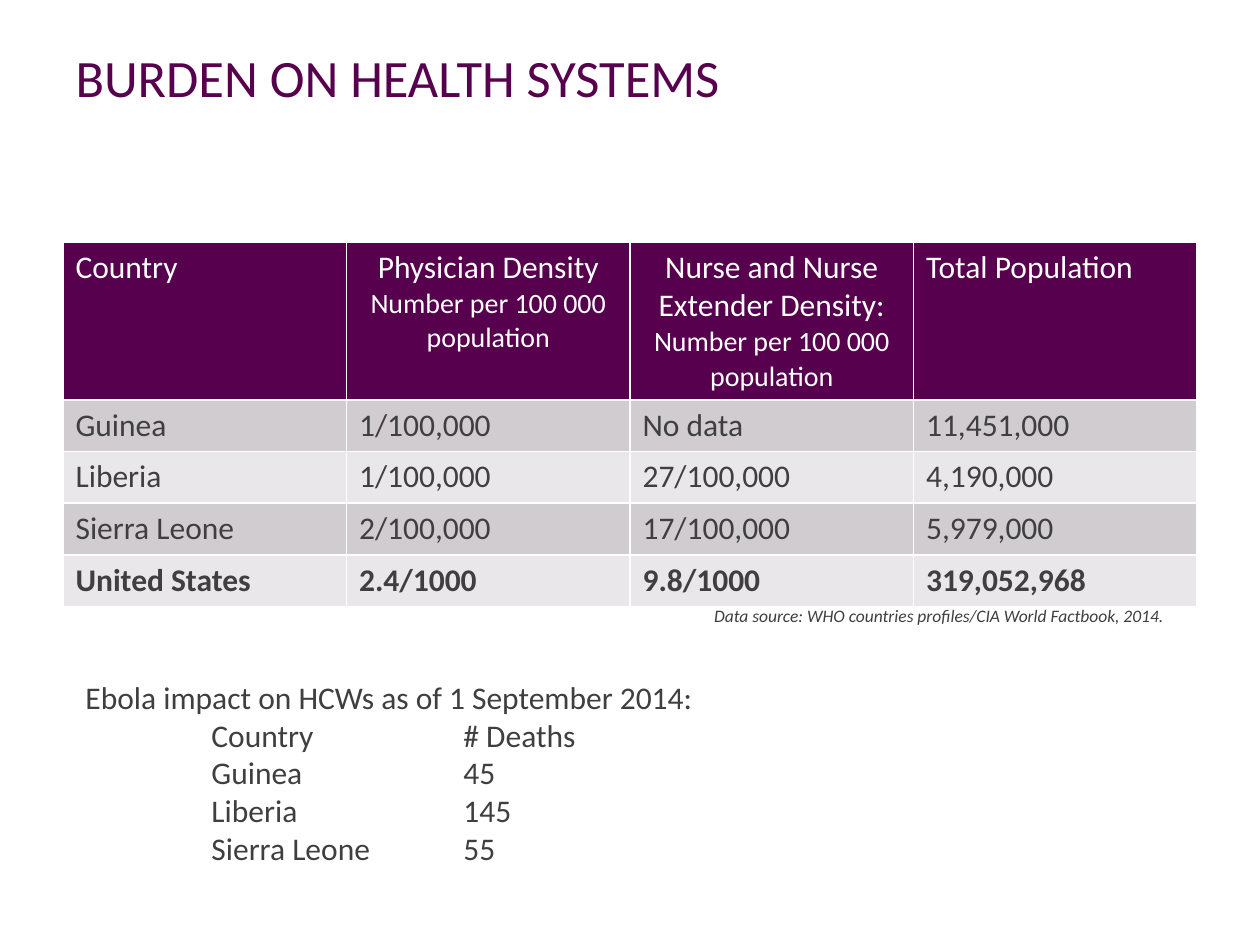
from lxml import etree
from pptx import Presentation
from pptx.dml.color import RGBColor
from pptx.enum.text import MSO_ANCHOR, PP_ALIGN
from pptx.oxml.ns import qn
from pptx.util import Inches, Pt

LEFT, CENTER, RIGHT = PP_ALIGN.LEFT, PP_ALIGN.CENTER, PP_ALIGN.RIGHT
MIDDLE = MSO_ANCHOR.MIDDLE
FONT = "Calibri"
COLORS = {"plum": "56004E", "text": "3F3F3F", "white": "FFFFFF",
          "dark": "D1CCD0", "light": "E9E7E9"}

# Each header cell is a list of paragraphs, each a list of (text, size) runs.
UNIT = ("Number per 100 000 population", 16)
HEADS = [
    [[("Country", 18)]],
    [[("Physician Density", 18)], [UNIT]],
    [[("Nurse and Nurse Extender Density: ", 18), UNIT]],
    [[("Total Population", 18)]],
]
ROWS = [
    ["Guinea", "1/100,000", "No data", "11,451,000"],
    ["Liberia", "1/100,000", "27/100,000", "4,190,000"],
    ["Sierra Leone", "2/100,000", "17/100,000", "5,979,000"],
    ["United States", "2.4/1000", "9.8/1000", "319,052,968"],
]
DEATHS = [("Country", "# Deaths"), ("Guinea", "45"), ("Liberia", "145"),
          ("Sierra Leone", "55")]


def color(name):
    return RGBColor.from_string(COLORS[name])


def add_run(para, text, size, tone="text", bold=False, italic=False):
    run = para.add_run()
    run.text = text
    font = run.font
    font.name, font.size = FONT, Pt(size)
    font.bold, font.italic = bold, italic
    font.color.rgb = color(tone)


def set_tabs(para, stops):
    """Put left tab stops, in inches, on a paragraph."""
    tabs = etree.SubElement(para._p.get_or_add_pPr(), qn("a:tabLst"))
    for stop in stops:
        etree.SubElement(tabs, qn("a:tab"), pos=str(Inches(stop)), algn="l")


def add_box(slide, left, top, width, height):
    box = slide.shapes.add_textbox(
        Inches(left), Inches(top), Inches(width), Inches(height))
    box.text_frame.word_wrap = True
    return box.text_frame


def add_title(slide, text):
    title = slide.shapes.title
    title.left, title.top = Inches(0.5), Inches(0.3)
    title.width, title.height = Inches(9), Inches(0.62)
    frame = title.text_frame
    frame.vertical_anchor = MIDDLE
    para = frame.paragraphs[0]
    para.alignment = LEFT
    add_run(para, text, 30, "plum")


def fill_cell(cell, paras, fill, tone, align=LEFT, bold=False):
    cell.fill.solid()
    cell.fill.fore_color.rgb = color(fill)
    frame = cell.text_frame
    for i, runs in enumerate(paras):
        para = frame.add_paragraph() if i else frame.paragraphs[0]
        para.alignment = align
        for text, size in runs:
            add_run(para, text, size, tone, bold)


def add_density(slide):
    table = slide.shapes.add_table(
        len(ROWS) + 1, len(HEADS), Inches(0.5), Inches(1.92),
        Inches(9), Inches(2.86)).table
    for row in table.rows:
        row.height = Inches(0.41)
    table.rows[0].height = Inches(1.25)
    for col, paras in enumerate(HEADS):
        align = CENTER if col in (1, 2) else LEFT
        fill_cell(table.cell(0, col), paras, "plum", "white", align)
    for i, row in enumerate(ROWS, 1):
        fill = "dark" if i % 2 else "light"
        for col, text in enumerate(row):
            fill_cell(table.cell(i, col), [[(text, 18)]], fill, "text",
                      bold=i == len(ROWS))


def add_source(slide, text):
    para = add_box(slide, 3.25, 4.75, 6.08, 0.27).paragraphs[0]
    para.alignment = RIGHT
    add_run(para, text, 10, italic=True)


def add_deaths(slide, head):
    frame = add_box(slide, 0.58, 5.33, 8.92, 1.62)
    add_run(frame.paragraphs[0], head, 18)
    for place, count in DEATHS:
        para = frame.add_paragraph()
        set_tabs(para, (1, 3))
        add_run(para, f"\t{place}\t{count}", 18)


def main():
    deck = Presentation()
    deck.slide_width, deck.slide_height = Inches(10), Inches(7.5)
    slide = deck.slides.add_slide(deck.slide_layouts[5])
    add_title(slide, "BURDEN ON HEALTH SYSTEMS")
    add_density(slide)
    add_source(slide, "Data source: WHO countries profiles/CIA World Factbook, 2014.")
    add_deaths(slide, "Ebola impact on HCWs as of 1 September 2014:")
    deck.save("out.pptx")


if __name__ == "__main__":
    main()
